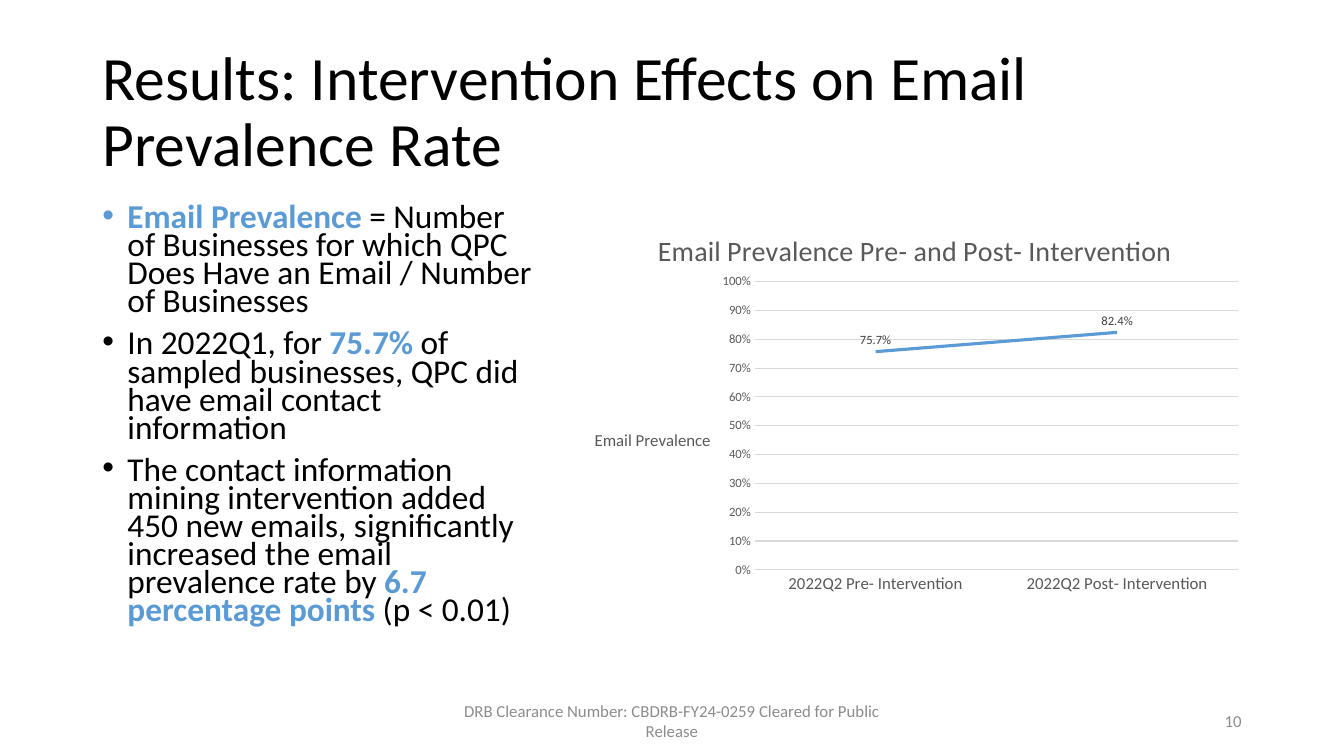
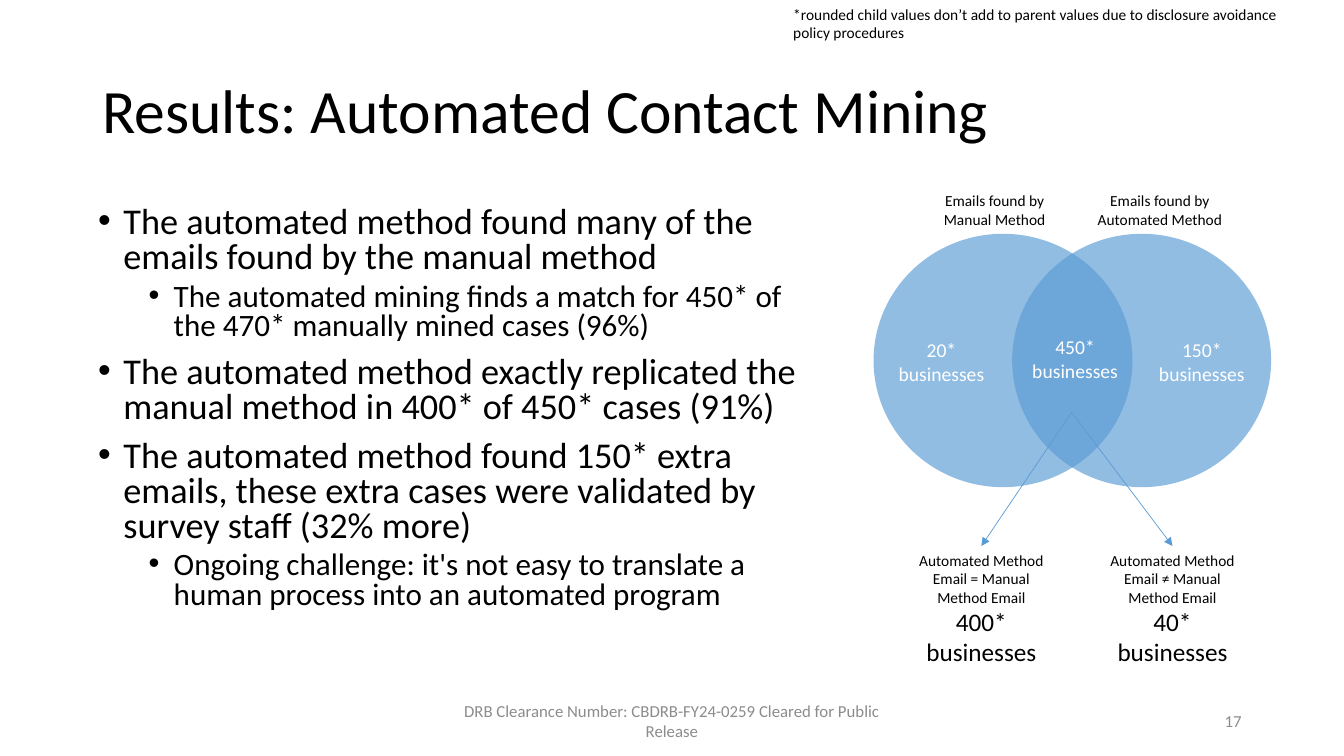
from lxml import etree
from pptx import Presentation
from pptx.chart.data import CategoryChartData
from pptx.dml.color import RGBColor
from pptx.enum.chart import XL_CHART_TYPE, XL_LABEL_POSITION, XL_MARKER_STYLE, XL_TICK_MARK
from pptx.enum.shapes import MSO_CONNECTOR, MSO_SHAPE
from pptx.enum.text import MSO_ANCHOR, PP_ALIGN
from pptx.oxml.ns import qn
from pptx.util import Pt

LINE_CHART = XL_CHART_TYPE.LINE
LABEL_ABOVE = XL_LABEL_POSITION.ABOVE
NO_MARKER = XL_MARKER_STYLE.NONE
NO_TICK = XL_TICK_MARK.NONE
STRAIGHT = MSO_CONNECTOR.STRAIGHT
ELLIPSE = MSO_SHAPE.OVAL
TOP, MIDDLE = MSO_ANCHOR.TOP, MSO_ANCHOR.MIDDLE
LEFT, CENTER, RIGHT = PP_ALIGN.LEFT, PP_ALIGN.CENTER, PP_ALIGN.RIGHT

FONT = "Calibri"
COLORS = {
    "text": "000000",
    "accent": "5B9BD5",
    "footer": "8C8C8C",
    "axis": "595959",
    "label": "404040",
    "grid": "D9D9D9",
    "white": "FFFFFF",
}
CLEARANCE = "DRB Clearance Number: CBDRB-FY24-0259 Cleared for Public Release"
INDENT = 18


def color(name):
    return RGBColor.from_string(COLORS[name])


def style_font(font, size, color_name="text", bold=False):
    font.name = FONT
    font.size = Pt(size)
    font.bold = bold
    font.color.rgb = color(color_name)


# Text
def add_box(page, left, top, width, height, anchor=TOP):
    box = page.shapes.add_textbox(Pt(left), Pt(top), Pt(width), Pt(height))
    box.text_frame.word_wrap = True
    box.text_frame.vertical_anchor = anchor
    return box


def add_text(page, area, lines, color_name="text", align=CENTER, anchor=TOP):
    """Write one paragraph for each (text, size) pair."""
    box = add_box(page, *area, anchor)
    frame = box.text_frame
    frame.text = "\n".join(text for text, _ in lines)
    for para, (_, size) in zip(frame.paragraphs, lines):
        para.alignment = align
        style_font(para.runs[0].font, size, color_name)
    return box


def add_bullet(para, level):
    props = para._p.get_or_add_pPr()
    props.set("marL", str(Pt(INDENT * (1 + 2 * level))))
    props.set("indent", str(-Pt(INDENT)))
    etree.SubElement(props, qn("a:buFont")).set("typeface", "Arial")
    etree.SubElement(props, qn("a:buChar")).set("char", "•")


def add_bullets(page, area, items, sizes, line_spacing):
    """Write (level, text) items; text between bars is emphasised."""
    frame = add_box(page, *area).text_frame
    for index, (level, text) in enumerate(items):
        para = frame.add_paragraph() if index else frame.paragraphs[0]
        add_bullet(para, level)
        para.level = level
        para.line_spacing = line_spacing
        if index:
            para.space_before = Pt(5 if level else 10)
        for part, words in enumerate(text.split("|")):
            if words:
                span = para.add_run()
                span.text = words
                strong = part % 2 == 1
                style_font(span.font, sizes[level], "accent" if strong else "text", strong)


def add_page(deck, title, number):
    page = deck.slides.add_slide(deck.slide_layouts[6])
    title_box = add_text(page, (66, 29, 828, 104), [(title, 44)], align=LEFT, anchor=MIDDLE)
    title_box.text_frame.paragraphs[0].line_spacing = 0.9
    add_text(page, (318, 500.5, 324, 29), [(CLEARANCE, 12)], "footer", anchor=MIDDLE)
    add_text(page, (678, 500.5, 216, 29), [(str(number), 12)], "footer", RIGHT, MIDDLE)
    return page


# Chart
def place_chart_part(element, index, inner=False, **fractions):
    for old in element.findall(qn("c:layout")):
        element.remove(old)
    layout = etree.Element(qn("c:layout"))
    element.insert(index, layout)
    manual = etree.SubElement(layout, qn("c:manualLayout"))
    if inner:
        etree.SubElement(manual, qn("c:layoutTarget")).set("val", "inner")
    for key in ("x", "y"):
        etree.SubElement(manual, qn(f"c:{key}Mode")).set("val", "edge")
    for key, value in fractions.items():
        etree.SubElement(manual, qn(f"c:{key}")).set("val", str(value))


def set_chart_title(title, text, size, x, y):
    frame = title.text_frame
    frame.text = text
    style_font(frame.paragraphs[0].runs[0].font, size, "axis")
    frame._txBody.bodyPr.set("rot", "0")
    frame._txBody.bodyPr.set("vert", "horz")
    place_chart_part(title._element, 1, x=x, y=y)


def style_line(line, color_name, width):
    line.color.rgb = color(color_name)
    line.width = Pt(width)


def add_prevalence_chart(page):
    data = CategoryChartData()
    data.categories = ["2022Q2 Pre- Intervention", "2022Q2 Post- Intervention"]
    data.add_series("Series 1", (0.757, 0.824))
    chart = page.shapes.add_chart(LINE_CHART, Pt(408), Pt(144), Pt(486), Pt(286), data).chart
    style_font(chart.font, 10)
    chart.has_legend = False
    set_chart_title(chart.chart_title, "Email Prevalence Pre- and Post- Intervention", 20, 0.12, 0.06)

    plot = chart.plots[0]
    plot.vary_by_categories = False
    place_chart_part(chart._chartSpace.chart.plotArea, 0, inner=True, x=0.27, y=0.2, w=0.71, h=0.72)

    series = plot.series[0]
    series.smooth = False
    series.marker.style = NO_MARKER
    style_line(series.format.line, "accent", 2.25)
    labels = series.data_labels
    labels.show_value = True
    labels.position = LABEL_ABOVE
    labels.number_format = "0.0%"
    labels.number_format_is_linked = False
    style_font(labels.font, 9, "label")

    categories, values = chart.category_axis, chart.value_axis
    for axis, size in ((categories, 12), (values, 9)):
        axis.major_tick_mark = axis.minor_tick_mark = NO_TICK
        style_font(axis.tick_labels.font, size, "axis")
    style_line(categories.format.line, "grid", 0.75)
    values.minimum_scale, values.maximum_scale = 0, 1
    values.major_unit = 0.1
    values.tick_labels.number_format = "0%"
    values.tick_labels.number_format_is_linked = False
    values.format.line.fill.background()
    style_line(values.major_gridlines.format.line, "grid", 0.75)
    set_chart_title(values.axis_title, "Email Prevalence", 12, 0.03, 0.56)


# Venn diagram
def add_circle(page, left):
    circle = page.shapes.add_shape(ELLIPSE, Pt(left), Pt(167), Pt(185), Pt(181))
    circle.shadow.inherit = False
    circle.fill.solid()
    circle.fill.fore_color.rgb = color("accent")
    circle.line.fill.background()
    fill_color = circle._element.spPr.find(qn("a:solidFill"))[0]
    etree.SubElement(fill_color, qn("a:alpha")).set("val", "66000")


def add_arrow(page, start, target):
    arrow = page.shapes.add_connector(STRAIGHT, Pt(start[0]), Pt(start[1]), 0, 0)
    arrow.end_connect(target, 0)
    style_line(arrow.line, "accent", 0.5)
    etree.SubElement(arrow.line._get_or_add_ln(), qn("a:tailEnd")).set("type", "triangle")
    etree.SubElement(arrow._element.spPr, qn("a:effectLst"))


def add_venn(page):
    for left in (624, 723):
        add_circle(page, left)
    for left, method in ((656, "Manual"), (774, "Automated")):
        add_text(page, (left, 133, 109, 34), [(f"Emails found by {method} Method", 11)])
    for left, top, width, count in ((624, 238, 97, 20), (725, 236, 86, 450), (804, 238, 109, 150)):
        add_text(page, (left, top, width, 41), [(f"{count}*", 14), ("businesses", 14)], "white")
    for left, sign, count in ((646.5, "=", 400), (783, "≠", 40)):
        lines = [(f"Automated Method Email {sign} Manual Method Email", 11), (f"{count}* businesses", 18)]
        outcome = add_text(page, (left, 390, 109, 91), lines)
        add_arrow(page, (765.5, 294.5), outcome)


def main():
    deck = Presentation()
    deck.slide_width, deck.slide_height = Pt(960), Pt(540)

    # Prevalence rate
    page = add_page(deck, "Results: Intervention Effects on Email Prevalence Rate", 10)
    add_bullets(page, (66, 144, 321, 343), [
        (0, "|Email Prevalence |= Number of Businesses for which QPC Does Have an Email / "
            "Number of Businesses"),
        (0, "In 2022Q1, for |75.7%| of sampled businesses, QPC did have email contact information"),
        (0, "The contact information mining intervention added 450 new emails, significantly "
            "increased the email prevalence rate by |6.7 percentage points| (p < 0.01)"),
    ], (23.8,), 0.7)
    add_prevalence_chart(page)

    # Automated mining
    page = add_page(deck, "Results: Automated Contact Mining", 17)
    add_bullets(page, (63, 144, 527, 310), [
        (0, "The automated method found many of the emails found by the manual method"),
        (1, "The automated mining finds a match for 450* of the 470* manually mined cases (96%)"),
        (0, "The automated method exactly replicated the manual method in 400* of 450* cases (91%)"),
        (0, "The automated method found 150* extra emails, these extra cases were validated by "
            "survey staff (32% more)"),
        (1, "Ongoing challenge: it's not easy to translate a human process into an automated program"),
    ], (25.9, 22.2), 0.8)
    add_venn(page)
    add_text(page, (559.5, 0, 370, 34), [
        ("*rounded child values don’t add to parent values due to disclosure avoidance "
         "policy procedures", 11)], align=LEFT)

    deck.save("out.pptx")


if __name__ == "__main__":
    main()
